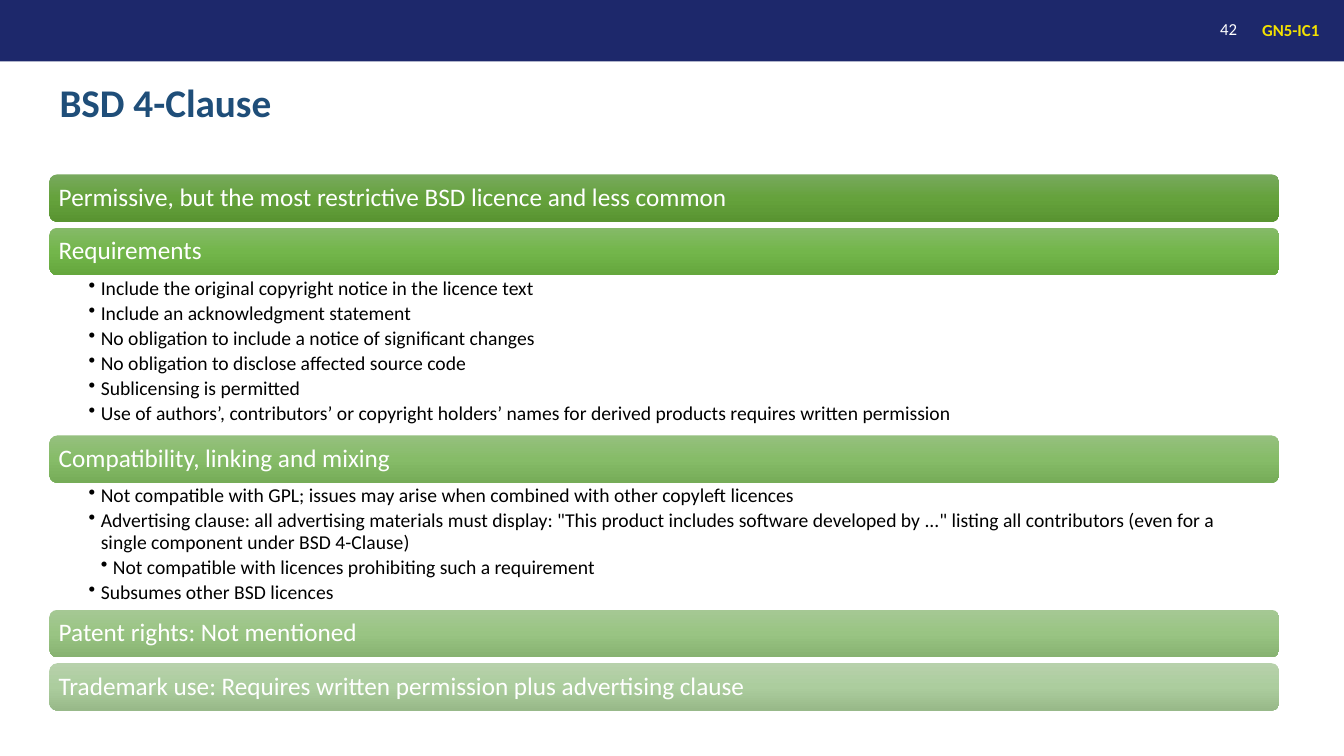
from lxml import etree
from pptx import Presentation
from pptx.dml.color import RGBColor
from pptx.enum.shapes import MSO_SHAPE
from pptx.enum.text import MSO_ANCHOR, MSO_AUTO_SIZE, PP_ALIGN
from pptx.oxml.ns import qn
from pptx.util import Inches, Pt

LEFT, RIGHT = PP_ALIGN.LEFT, PP_ALIGN.RIGHT
TOP, MIDDLE = MSO_ANCHOR.TOP, MSO_ANCHOR.MIDDLE
NO_AUTOFIT = MSO_AUTO_SIZE.NONE
RECTANGLE, ROUNDED = MSO_SHAPE.RECTANGLE, MSO_SHAPE.ROUNDED_RECTANGLE
TITLE_ONLY = 5

COLOURS = {"band": "1D286B", "accent": "F4E200", "title": "1F4E79",
           "white": "FFFFFF", "black": "000000"}

# Vertical rhythm of the section list, in inches
LIST_LEFT, LIST_TOP, LIST_WIDTH = 0.49, 1.73, 12.2
BAR_HEIGHT, BAR_GAP = 0.47, 0.06
BULLET_INDENT = 0.12

# Heading, gradient from top to bottom, height of details, (level, detail)
SECTIONS = [
    ("Permissive, but the most restrictive BSD licence and less common",
     ("78A95E", "65A23C", "599431"), 0, []),
    ("Requirements", ("85BA68", "73B64B", "65A73D"), 1.59, [
        (1, "Include the original copyright notice in the licence text"),
        (1, "Include an acknowledgment statement"),
        (1, "No obligation to include a notice of significant changes"),
        (1, "No obligation to disclose affected source code"),
        (1, "Sublicensing is permitted"),
        (1, "Use of authors’, contributors’ or copyright holders’ names for "
            "derived products requires written permission")]),
    ("Compatibility, linking and mixing", ("95C07E", "86BC68", "76AC58"), 1.26, [
        (1, "Not compatible with GPL; issues may arise when combined with "
            "other copyleft licences"),
        (1, "Advertising clause: all advertising materials must display: "
            "\"This product includes software developed by ...\" listing all "
            "contributors (even for a single component under BSD 4-Clause)"),
        (2, "Not compatible with licences prohibiting such a requirement"),
        (1, "Subsumes other BSD licences")]),
    ("Patent rights: Not mentioned", ("A5C894", "99C483", "87B271"), 0, []),
    ("Trademark use: Requires written permission plus advertising clause",
     ("B7D1AB", "ACCD9E", "98B989"), 0, []),
]


class LicenceSlide:
    """Holds the style and the slide being built."""

    font_name = "Calibri"
    line_spacing = 0.9

    def __init__(self, presentation):
        layout = presentation.slide_layouts[TITLE_ONLY]
        self.slide = presentation.slides.add_slide(layout)

    def format_frame(self, frame, anchor, margins):
        left, top, right, bottom = (Inches(margin) for margin in margins)
        values = {"word_wrap": True, "auto_size": NO_AUTOFIT,
                  "vertical_anchor": anchor, "margin_left": left,
                  "margin_top": top, "margin_right": right,
                  "margin_bottom": bottom}
        for name, value in values.items():
            setattr(frame, name, value)

    def fill_paragraph(self, paragraph, text, size, colour, bold=False,
                       alignment=LEFT, space_after=0):
        paragraph.text = text
        values = {"alignment": alignment, "line_spacing": self.line_spacing,
                  "space_before": Pt(0), "space_after": Pt(space_after)}
        for name, value in values.items():
            setattr(paragraph, name, value)
        font = paragraph.runs[0].font
        for name, value in {"name": self.font_name, "size": Pt(size),
                            "bold": bold}.items():
            setattr(font, name, value)
        font.color.rgb = RGBColor.from_string(COLOURS[colour])

    def title(self, text, left, top, width, height):
        shape = self.slide.shapes.title
        for name, value in {"left": left, "top": top, "width": width,
                            "height": height}.items():
            setattr(shape, name, Inches(value))
        self.format_frame(shape.text_frame, MIDDLE, (0.1, 0.05, 0.1, 0.05))
        self.fill_paragraph(shape.text_frame.paragraphs[0], text, 28, "title",
                            bold=True)

    def shape(self, kind, left, top, width, height):
        shape = self.slide.shapes.add_shape(
            kind, Inches(left), Inches(top), Inches(width), Inches(height))
        shape.shadow.inherit = False
        shape.line.fill.background()
        return shape

    def band(self, height):
        shape = self.shape(RECTANGLE, 0, 0, 13.33, height)
        shape.fill.solid()
        shape.fill.fore_color.rgb = RGBColor.from_string(COLOURS["band"])

    def text_box(self, left, top, width, height, anchor, margins):
        box = self.slide.shapes.add_textbox(
            Inches(left), Inches(top), Inches(width), Inches(height))
        self.format_frame(box.text_frame, anchor, margins)
        return box.text_frame

    def label(self, text, left, top, width, height, colour, **style):
        frame = self.text_box(left, top, width, height, MIDDLE,
                              (0.1, 0.05, 0.1, 0.05))
        self.fill_paragraph(frame.paragraphs[0], text, 12, colour, **style)

    def bar(self, text, gradient, top):
        shape = self.shape(ROUNDED, LIST_LEFT, top, LIST_WIDTH, BAR_HEIGHT)
        shape.fill.gradient()
        # Three colour stops, running downwards
        fill = shape.element.spPr.find(qn("a:gradFill"))
        for child in list(fill):
            fill.remove(child)
        stops = etree.SubElement(fill, qn("a:gsLst"))
        for position, colour in zip((0, 50000, 100000), gradient):
            stop = etree.SubElement(stops, qn("a:gs"), pos=str(position))
            etree.SubElement(stop, qn("a:srgbClr"), val=colour)
        etree.SubElement(fill, qn("a:lin"), ang="5400000", scaled="0")
        self.format_frame(shape.text_frame, MIDDLE, (0.07, 0.07, 0.07, 0.07))
        self.fill_paragraph(shape.text_frame.paragraphs[0], text, 18, "white")

    def bullets(self, items, top, height):
        frame = self.text_box(LIST_LEFT, top, LIST_WIDTH, height, TOP,
                              (0.39, 0.03, 0.14, 0.03))
        for index, (level, text) in enumerate(items):
            paragraph = frame.add_paragraph() if index else frame.paragraphs[0]
            paragraph.level = level
            properties = paragraph._p.get_or_add_pPr()
            properties.set("marL", str(Inches(BULLET_INDENT * level)))
            properties.set("indent", str(-Inches(BULLET_INDENT)))
            etree.SubElement(properties, qn("a:buChar"), char="•")
            self.fill_paragraph(paragraph, text, 14, "black", space_after=2.8)


def main():
    presentation = Presentation()
    presentation.slide_width = Inches(13.33)
    presentation.slide_height = Inches(7.5)
    slide = LicenceSlide(presentation)

    # Header
    slide.band(0.61)
    slide.label("42", 11.64, 0.12, 0.73, 0.36, "white", alignment=RIGHT)
    slide.label("GN5-IC1", 12.42, 0.15, 0.9, 0.32, "accent", bold=True)
    slide.title("BSD 4-Clause", 0.49, 0.8, 10.82, 0.47)

    # Sections, stacked from the top
    top = LIST_TOP
    for heading, gradient, details_height, details in SECTIONS:
        slide.bar(heading, gradient, top)
        top += BAR_HEIGHT
        if details:
            slide.bullets(details, top, details_height)
        top += details_height or BAR_GAP

    presentation.save("out.pptx")


if __name__ == "__main__":
    main()
